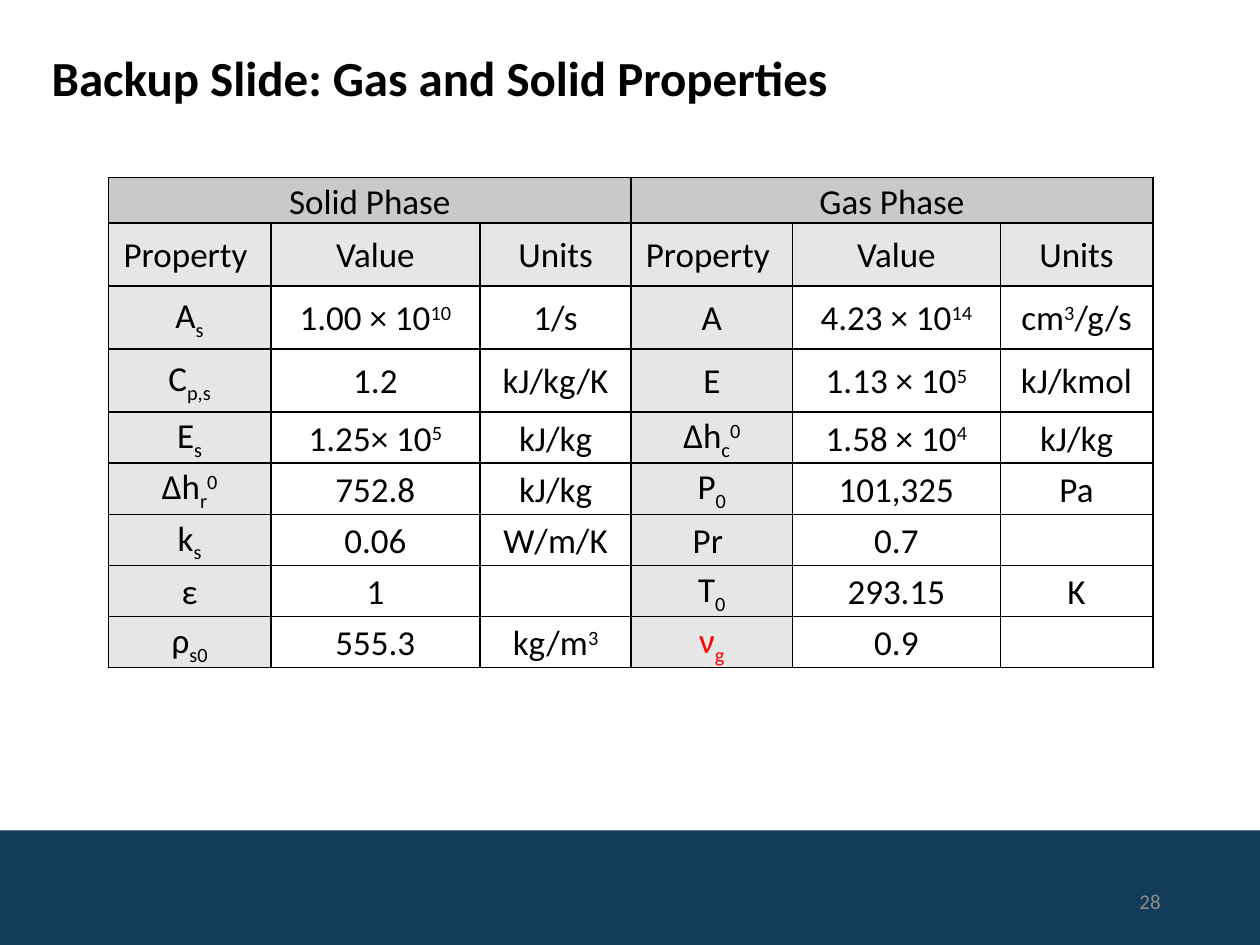
from typing import NamedTuple

from lxml import etree
from pptx import Presentation
from pptx import util as u
from pptx.dml.color import RGBColor
from pptx.enum import shapes, text
from pptx.oxml import ns

BLACK, RED, NAVY, GREY = "000000", "FF0000", "123A59", "8C8C8C"
HEADER_FILL, LABEL_FILL = "C9C9C9", "E7E6E6"
BASELINES = {"_": -25000, "^": 30000, "|": 0}


class Property(NamedTuple):
    """One property; in its strings _ lowers, ^ raises and | returns to the line."""
    symbol: str
    value: str
    units: str = ""
    color: str = BLACK


SOLID = [
    Property("A_s", "1.00 × 10^10", "1/s"),
    Property("C_p,s", "1.2", "kJ/kg/K"),
    Property("E_s", "1.25× 10^5", "kJ/kg"),
    Property("Δh_r^0", "752.8", "kJ/kg"),
    Property("k_s", "0.06", "W/m/K"),
    Property("ε", "1"),
    Property("ρ_s0", "555.3", "kg/m^3"),
]
GAS = [
    Property("A", "4.23 × 10^14", "cm^3|/g/s"),
    Property("E", "1.13 × 10^5", "kJ/kmol"),
    Property("Δh_c^0", "1.58 × 10^4", "kJ/kg"),
    Property("P_0", "101,325", "Pa"),
    Property("Pr ", "0.7"),
    Property("T_0", "293.15", "K"),
    Property("ν_g", "0.9", color=RED),
]
HEADINGS = Property("Property ", "Value", "Units")
COLUMN_WIDTHS = [1.29, 1.66, 1.2, 1.28, 1.65, 1.21]
ROW_HEIGHTS = [0.36] + [0.5] * 3 + [0.4] * 5


def rgb(color: str) -> RGBColor:
    return RGBColor.from_string(color)


def split_baselines(marked: str) -> list[tuple[str, int]]:
    pieces = [("", 0)]
    for char in marked:
        if char in BASELINES:
            pieces.append(("", BASELINES[char]))
        else:
            content, baseline = pieces[-1]
            pieces[-1] = (content + char, baseline)
    return pieces


def write(frame, marked: str, *, size: float, color: str = BLACK, bold: bool = False,
          align=text.PP_ALIGN.LEFT, spacing: float = 1.0) -> None:
    para = frame.paragraphs[0]
    para.alignment = align
    para.line_spacing = spacing
    for content, baseline in split_baselines(marked):
        span = para.add_run()
        span.text = content
        span.font.name = "Calibri"
        span.font.size = u.Pt(size)
        span.font.bold = bold
        span.font.color.rgb = rgb(color)
        if baseline:
            span.font._element.set("baseline", str(baseline))


def add_borders(cell) -> None:
    properties = cell._tc.get_or_add_tcPr()
    for side in ("lnL", "lnR", "lnT", "lnB"):
        line = etree.SubElement(properties, ns.qn(f"a:{side}"), w=str(u.Pt(1)))
        fill = etree.SubElement(line, ns.qn("a:solidFill"))
        etree.SubElement(fill, ns.qn("a:srgbClr"), val=BLACK)


def fill_cell(cell, marked: str, fill: str = "", color: str = BLACK) -> None:
    cell.margin_left = cell.margin_right = u.Inches(0.06)
    cell.margin_top = cell.margin_bottom = 0
    cell.vertical_anchor = text.MSO_ANCHOR.MIDDLE
    if fill:
        cell.fill.solid()
        cell.fill.fore_color.rgb = rgb(fill)
    else:
        cell.fill.background()
    if marked:
        write(cell.text_frame, marked, size=20, color=color,
              align=text.PP_ALIGN.CENTER, spacing=1.07)


def add_phase(table, first: int, name: str, rows: list[Property]) -> None:
    """Fill the three table columns of one phase, starting at column first."""
    table.cell(0, first).merge(table.cell(0, first + 2))
    fill_cell(table.cell(0, first), name, HEADER_FILL)
    for row, item in enumerate([HEADINGS] + rows, start=1):
        body_fill = LABEL_FILL if row == 1 else ""
        fill_cell(table.cell(row, first), item.symbol, LABEL_FILL, item.color)
        fill_cell(table.cell(row, first + 1), item.value, body_fill)
        fill_cell(table.cell(row, first + 2), item.units, body_fill)


def add_property_table(page) -> None:
    frame = page.shapes.add_table(
        len(ROW_HEIGHTS), len(COLUMN_WIDTHS), u.Inches(0.86), u.Inches(1.41),
        u.Inches(sum(COLUMN_WIDTHS)), u.Inches(sum(ROW_HEIGHTS)))
    table = frame.table
    table.first_row = table.horz_banding = False
    for column, width in zip(table.columns, COLUMN_WIDTHS):
        column.width = u.Inches(width)
    for row, height in zip(table.rows, ROW_HEIGHTS):
        row.height = u.Inches(height)
    for cell in table.iter_cells():
        add_borders(cell)
    add_phase(table, 0, "Solid Phase", SOLID)
    add_phase(table, 3, "Gas Phase", GAS)


def add_footer(page) -> None:
    band = page.shapes.add_shape(shapes.MSO_SHAPE.RECTANGLE, 0, u.Inches(6.59),
                                 u.Inches(10), u.Inches(0.91))
    band.shadow.inherit = False
    band.fill.solid()
    band.fill.fore_color.rgb = rgb(NAVY)
    band.line.fill.background()
    number = page.shapes.add_textbox(u.Inches(7.06), u.Inches(6.95),
                                     u.Inches(2.25), u.Inches(0.4)).text_frame
    number.word_wrap = True
    number.vertical_anchor = text.MSO_ANCHOR.MIDDLE
    write(number, "28", size=12, color=GREY, align=text.PP_ALIGN.RIGHT)


def add_title(page) -> None:
    title = page.shapes.title
    title.left, title.top = u.Inches(0.31), u.Inches(0.33)
    title.width, title.height = u.Inches(8.54), u.Inches(0.57)
    title.text_frame.word_wrap = True
    title.text_frame.auto_size = text.MSO_AUTO_SIZE.SHAPE_TO_FIT_TEXT
    title.text_frame.vertical_anchor = text.MSO_ANCHOR.TOP
    write(title.text_frame, "Backup Slide: Gas and Solid Properties", size=28, bold=True)


def main() -> None:
    deck = Presentation()
    deck.slide_width, deck.slide_height = u.Inches(10), u.Inches(7.5)
    page = deck.slides.add_slide(deck.slide_layouts[5])
    add_footer(page)
    add_property_table(page)
    add_title(page)
    deck.save("out.pptx")


if __name__ == "__main__":
    main()
